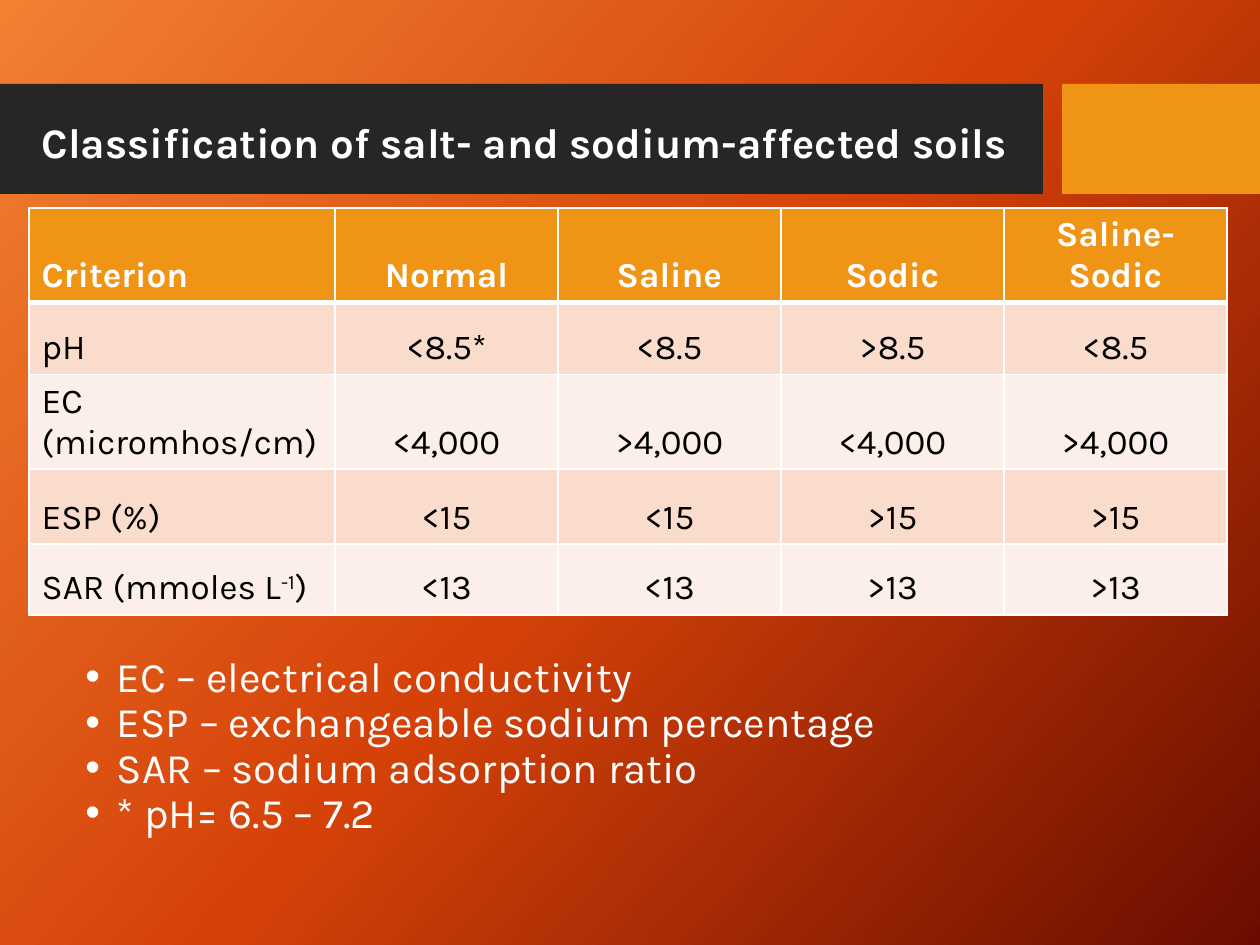
from copy import deepcopy
from dataclasses import dataclass

from lxml import etree
from pptx import Presentation, util as u
from pptx.dml.color import RGBColor
from pptx.enum import shapes, text
from pptx.oxml.ns import qn

PX_PER_INCH = 126


def px(length):
    return u.Emu(round(length * u.Inches(1) / PX_PER_INCH))


@dataclass(frozen=True)
class Theme:
    font: str = "Karla"
    heading_size: int = 24
    table_size: int = 20
    light: str = "FFFFFF"
    ink: str = "000000"
    bar: str = "262626"
    accent: str = "F09415"
    bands: tuple = ("F9DCCC", "FCEEE8")
    backdrop: tuple = ("F18031", "D54209", "6A0D00")
    backdrop_angle: int = 42


class SlideBuilder:
    def __init__(self, slide, theme):
        self.slide = slide
        self.theme = theme

    def style(self, font, size, color, bold=False):
        font.name = self.theme.font
        font.size = u.Pt(size)
        font.bold = bold
        font.color.rgb = RGBColor.from_string(color)

    def background(self):
        fill = self.slide.background.fill
        fill.gradient()
        fill.gradient_angle = 360 - self.theme.backdrop_angle
        stop_list = self.slide.element.find(".//" + qn("a:gsLst"))
        stop_list.append(deepcopy(stop_list[0]))
        colors = self.theme.backdrop
        for index, (stop, color) in enumerate(zip(fill.gradient_stops, colors)):
            stop.position = index / (len(colors) - 1)
            stop.color.rgb = RGBColor.from_string(color)

    def bar(self, left, top, width, height, color):
        bar = self.slide.shapes.add_shape(
            shapes.MSO_SHAPE.RECTANGLE, *map(px, (left, top, width, height)))
        bar.shadow.inherit = False
        bar.fill.solid()
        bar.fill.fore_color.rgb = RGBColor.from_string(color)
        bar.line.fill.background()

    def title(self, left, top, width, height, wording):
        """Place the title in front of everything drawn so far."""
        title = self.slide.shapes.title
        title.left, title.top, title.width, title.height = map(
            px, (left, top, width, height))
        self.slide.shapes.element.append(title.element)
        frame = title.text_frame
        frame.text = wording
        frame.word_wrap = True
        frame.auto_size = text.MSO_AUTO_SIZE.NONE
        frame.vertical_anchor = text.MSO_ANCHOR.TOP
        paragraph = frame.paragraphs[0]
        paragraph.alignment = text.PP_ALIGN.JUSTIFY
        self.style(paragraph.runs[0].font, self.theme.heading_size,
                   self.theme.light, bold=True)

    def border(self, cell, side, points):
        line = etree.SubElement(cell._tc.get_or_add_tcPr(), qn(f"a:ln{side}"),
                                w=str(u.Pt(points)))
        fill = etree.SubElement(line, qn("a:solidFill"))
        etree.SubElement(fill, qn("a:srgbClr"), val=self.theme.light)

    def cell(self, cell, content, row, column):
        """Fill one cell; every second part of a tuple is superscript."""
        header = row == 0
        for side in "LRTB":
            under_header = (row, side) in ((0, "B"), (1, "T"))
            self.border(cell, side, 3 if under_header else 1)
        color = self.theme.accent if header else self.theme.bands[(row - 1) % 2]
        cell.fill.solid()
        cell.fill.fore_color.rgb = RGBColor.from_string(color)
        cell.vertical_anchor = text.MSO_ANCHOR.BOTTOM
        paragraph = cell.text_frame.paragraphs[0]
        paragraph.alignment = (text.PP_ALIGN.CENTER if column
                               else text.PP_ALIGN.LEFT)
        parts = content if isinstance(content, tuple) else (content,)
        for index, part in enumerate(parts):
            run = paragraph.add_run()
            run.text = part
            self.style(run.font, self.theme.table_size,
                       self.theme.light if header else self.theme.ink, header)
            if index % 2:
                run._r.get_or_add_rPr().set("baseline", "30000")

    def table(self, left, top, widths, heights, rows):
        table = self.slide.shapes.add_table(
            len(heights), len(widths),
            *map(px, (left, top, sum(widths), sum(heights)))).table
        for column, width in zip(table.columns, widths):
            column.width = px(width)
        for row, height in zip(table.rows, heights):
            row.height = px(height)
        for r, row in enumerate(rows):
            for c, content in enumerate(row):
                self.cell(table.cell(r, c), content, r, c)

    def bullets(self, left, top, width, height, items):
        box = self.slide.shapes.add_textbox(
            *map(px, (left, top, width, height)))
        frame = box.text_frame
        frame.word_wrap = True
        frame.text = "\n".join(items)
        indent = u.Inches(0.25)
        for paragraph in frame.paragraphs:
            paragraph.line_spacing = 0.9
            properties = paragraph._p.get_or_add_pPr()
            properties.set("marL", str(indent))
            properties.set("indent", str(-indent))
            etree.SubElement(properties, qn("a:buFont"), typeface="Arial")
            etree.SubElement(properties, qn("a:buChar"), char="•")
            self.style(paragraph.runs[0].font, self.theme.heading_size,
                       self.theme.light)


CRITERIA = [
    ("Criterion", "Normal", "Saline", "Sodic", "Saline-Sodic"),
    ("pH", "<8.5*", "<8.5", ">8.5", "<8.5"),
    ("EC (micromhos/cm)", "<4,000", ">4,000", "<4,000", ">4,000"),
    ("ESP (%)", "<15", "<15", ">15", ">15"),
    (("SAR (mmoles L", "-1", ")"), "<13", "<13", ">13", ">13"),
]
ABBREVIATIONS = [
    "EC – electrical conductivity",
    "ESP – exchangeable sodium percentage",
    "SAR – sodium adsorption ratio",
    "* pH= 6.5 – 7.2",
]


def main():
    theme = Theme()
    deck = Presentation()
    deck.slide_width, deck.slide_height = px(1260), px(945)
    title_only = deck.slide_layouts[5]
    page = SlideBuilder(deck.slides.add_slide(title_only), theme)
    page.background()
    page.bar(0, 84, 1043, 110, theme.bar)
    page.bar(1062, 84, 198, 110, theme.accent)
    page.table(29, 208, [306] + [223] * 4, [94, 72, 94, 75, 71], CRITERIA)
    page.title(29, 110, 993, 63,
               "Classification of salt- and sodium-affected soils")
    page.bullets(73, 650, 949, 207, ABBREVIATIONS)
    deck.save("out.pptx")


if __name__ == "__main__":
    main()
